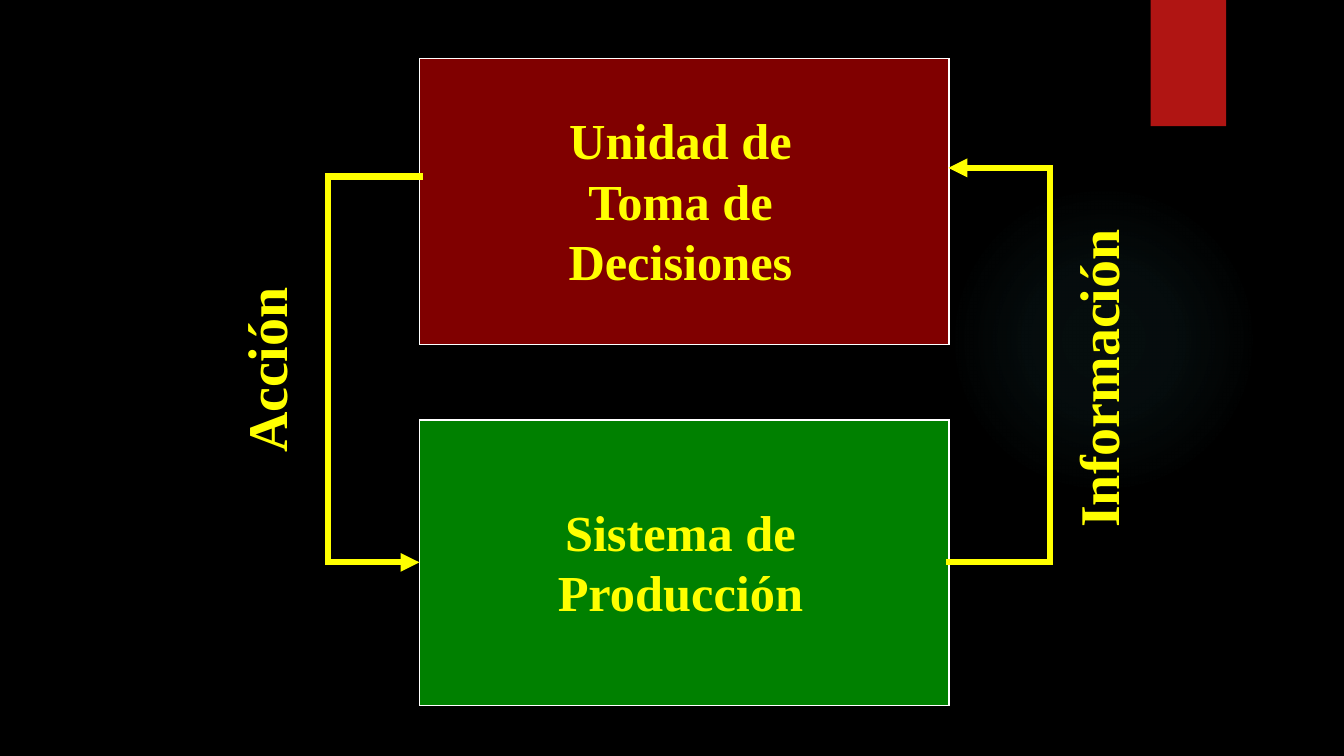
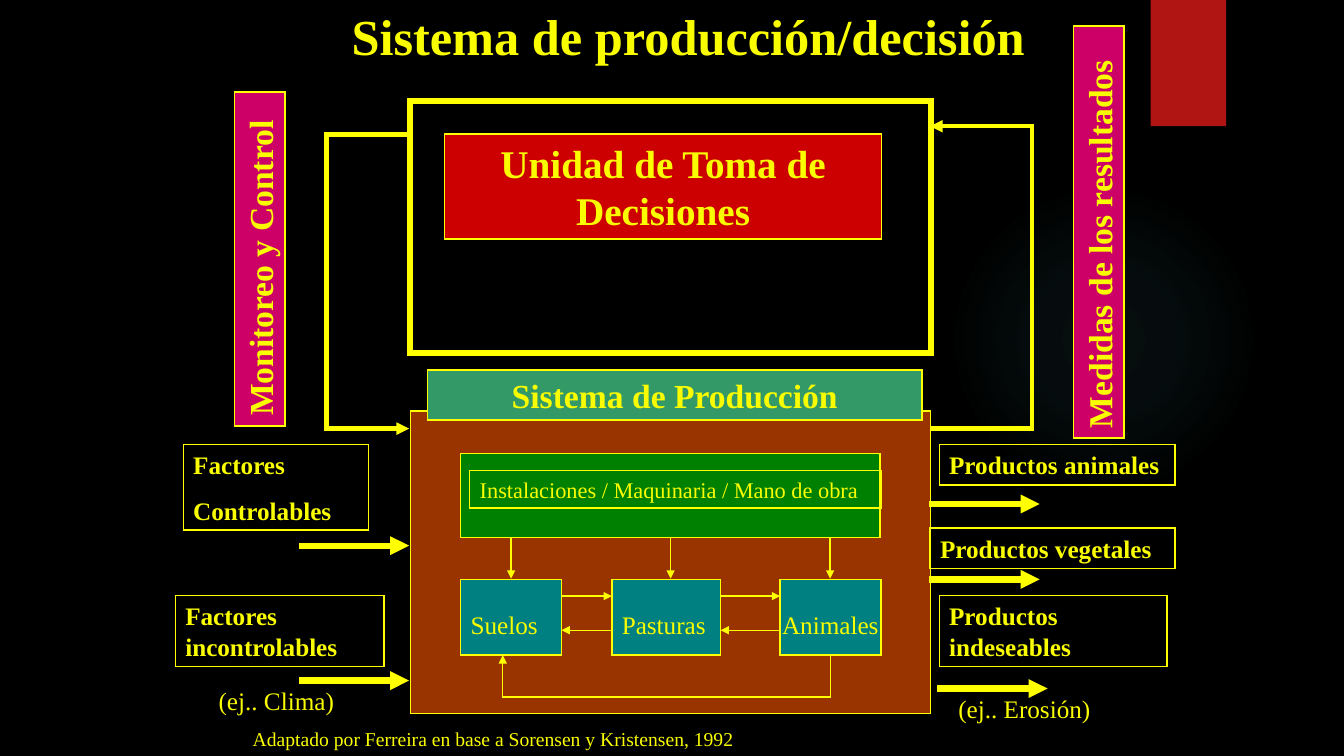
from itertools import pairwise

from pptx import Presentation
from pptx.dml.color import RGBColor
from pptx.enum.shapes import MSO_CONNECTOR, MSO_SHAPE
from pptx.enum.text import MSO_ANCHOR, MSO_AUTO_SIZE, PP_ALIGN
from pptx.oxml import parse_xml
from pptx.oxml.ns import nsdecls, qn
from pptx.util import Cm, Pt

RECT, ELLIPSE = MSO_SHAPE.RECTANGLE, MSO_SHAPE.OVAL
STRAIGHT = MSO_CONNECTOR.STRAIGHT
TOP, MIDDLE = MSO_ANCHOR.TOP, MSO_ANCHOR.MIDDLE
LEFT, CENTER = PP_ALIGN.LEFT, PP_ALIGN.CENTER
FIXED_SIZE = MSO_AUTO_SIZE.NONE
TITLE_ONLY, BLANK = 5, 6

FONT = "Times New Roman"
BLACK, WHITE, YELLOW, LEMON = "000000", "FFFFFF", "FFFF00", "FAFD00"
MAROON, GREEN, TEAL, BROWN = "800000", "008000", "008080", "993300"
SCARLET, MAGENTA, SEA, TAB_RED, GLOW = "CC0000", "CC0066", "339966", "B01513", "50B9C1"
INSETS = (0.25, 0.13, 0.25, 0.13)


def rgb(value):
    return RGBColor.from_string(value)


def write(shape, text, size=18, color=LEMON, bold=False, align=LEFT,
          anchor=TOP, insets=INSETS, gap=0):
    """Fill a shape with one paragraph per line; insets run left, top, right, bottom."""
    frame = shape.text_frame
    frame.text = text
    frame.word_wrap = True
    frame.auto_size = FIXED_SIZE
    frame.vertical_anchor = anchor
    (frame.margin_left, frame.margin_top,
     frame.margin_right, frame.margin_bottom) = map(Cm, insets)
    for index, paragraph in enumerate(frame.paragraphs):
        paragraph.alignment = align
        paragraph.space_before = Pt(gap if index else 0)
        font = paragraph.font
        font.name, font.size, font.bold = FONT, Pt(size), bold
        font.color.rgb = rgb(color)


class Deck:
    """Holds the presentation, its shared style and the slide being drawn."""

    def __init__(self):
        self.prs = Presentation()
        self.prs.slide_width, self.prs.slide_height = Cm(33.87), Cm(19.05)
        self.slide = None

    def new_slide(self, layout):
        self.slide = self.prs.slides.add_slide(self.prs.slide_layouts[layout])

    def decorate_master(self):
        """Give the master its black ground, soft glow and red tab."""
        master = self.prs.slide_master
        ground = master.background.fill
        ground.solid()
        ground.fore_color.rgb = rgb(BLACK)
        glow = self.box((23.9, 4.65, 7.82, 7.82), line=None, kind=ELLIPSE)
        stops = "".join(
            f'<a:gs pos="{place}000"><a:srgbClr val="{GLOW}">'
            f'<a:alpha val="{alpha}000"/></a:srgbClr></a:gs>'
            for place, alpha in ((0, 7), (36, 6), (69, 0)))
        gradient = parse_xml(
            f'<a:gradFill {nsdecls("a")}><a:gsLst>{stops}</a:gsLst><a:path path="circle">'
            '<a:fillToRect l="50000" t="50000" r="50000" b="50000"/></a:path></a:gradFill>')
        properties = glow.element.spPr
        properties.replace(properties.find(qn("a:noFill")), gradient)
        tab = self.box((29, 0, 1.9, 3.18), fill=TAB_RED, line=None)
        for ornament in (glow, tab):
            master.shapes.element.append(ornament.element)

    def title(self, text, at):
        heading = self.slide.shapes.title
        heading.left, heading.top, heading.width, heading.height = map(Cm, at)
        write(heading, text, size=36, bold=True, align=CENTER)

    def box(self, at, text="", fill=None, line=YELLOW, weight=1, turn=0,
            kind=RECT, **style):
        shape = self.slide.shapes.add_shape(kind, *map(Cm, at))
        shape.shadow.inherit = False
        shape.rotation = turn
        if fill:
            shape.fill.solid()
            shape.fill.fore_color.rgb = rgb(fill)
        else:
            shape.fill.background()
        if line:
            shape.line.color.rgb = rgb(line)
            shape.line.width = Pt(weight)
            stroke = shape.element.spPr.find(qn("a:ln"))
            stroke.append(parse_xml(f'<a:miter {nsdecls("a")} lim="800000"/>'))
        else:
            shape.line.fill.background()
        if text:
            write(shape, text, **style)
        return shape

    def caption(self, at, text, turn=0, **style):
        label = self.slide.shapes.add_textbox(*map(Cm, at))
        label.rotation = turn
        write(label, text, **style)

    def arrow(self, *points, weight=1):
        """Draw straight segments through the points, with a head at the last one."""
        for start, end in pairwise(points):
            segment = self.slide.shapes.add_connector(STRAIGHT, *map(Cm, start + end))
            segment.line.color.rgb = rgb(YELLOW)
            segment.line.width = Pt(weight)
            properties = segment.element.spPr
            properties.append(parse_xml(f'<a:effectLst {nsdecls("a")}/>'))
            stroke = properties.find(qn("a:ln"))
            stroke.set("cap", "sq")
        stroke.append(parse_xml(f'<a:tailEnd {nsdecls("a")} type="triangle"/>'))


def draw_decision_cycle(deck):
    for top, fill, text in ((10.58, GREEN, "Sistema de Producción"),
                            (1.48, MAROON, "Unidad de Toma de Decisiones")):
        deck.box((10.58, top, 13.34, 7.2), text, fill=fill, line=WHITE, size=36,
                 color=YELLOW, bold=True, align=CENTER, anchor=MIDDLE,
                 insets=(2.3, 0.13, 2.5, 0.2))
    deck.arrow((23.93, 14.17), (26.46, 14.17), (26.46, 4.23), (23.9, 4.23), weight=4.5)
    deck.arrow((10.58, 4.45), (8.26, 4.45), (8.26, 14.17), (10.57, 14.17), weight=4.5)
    for at, text in (((23.42, 8.33, 8.46, 1.98), "Información"),
                     ((3.84, 7.8, 5.72, 1.98), "Acción")):
        deck.caption(at, text, turn=270, size=40, color=YELLOW, bold=True)


def draw_resources(deck):
    """Draw the production system with its resources and their exchanges."""
    deck.box((10.34, 10.36, 13.11, 7.62), fill=BROWN)
    deck.box((11.61, 11.43, 10.57, 2.12), fill=GREEN)
    deck.box((11.84, 11.86, 10.36, 0.94), "Instalaciones / Maquinaria / Mano de obra",
             size=16)
    resources = ((11.61, 2.54, 0.25, "Suelos"), (15.42, 2.74, 0.25, "Pasturas"),
                 (19.66, 2.54, 0.05, "Animales"))
    for index, (left, width, inset, name) in enumerate(resources):
        deck.box((left, 14.6, width, 1.91), name, fill=TEAL, insets=(inset, 0.76, 0, 0))
        supply = 12.88 + 4.02 * index
        deck.arrow((supply, 13.56), (supply, 14.58))
    for (left, width, *_), (following, *_) in pairwise(resources):
        edge = left + width
        deck.arrow((edge, 15.02), (following, 15.02))
        deck.arrow((following, 15.88), (edge, 15.88))
    deck.arrow((20.93, 16.54), (20.93, 17.56), (12.67, 17.56), (12.67, 16.51))


def draw_production_system(deck):
    deck.title("Sistema de producción/decisión", (8.46, 0, 17.78, 1.78))
    deck.box((10.34, 2.54, 13.13, 6.35), weight=4.5)
    deck.box((11.2, 3.38, 11.02, 2.64), "Unidad de Toma de Decisiones", fill=SCARLET,
             size=28, bold=True, align=CENTER)
    draw_resources(deck)
    deck.box((10.77, 9.32, 12.47, 1.27), "Sistema de Producción", fill=SEA,
             size=24, bold=True, align=CENTER)
    deck.arrow((23.5, 10.8), (26.01, 10.8), (26.01, 3.18), (23.44, 3.18), weight=3)
    deck.arrow((10.36, 3.39), (8.23, 3.39), (8.23, 10.8), (10.31, 10.8), weight=3)
    for at, text in (((22.5, 5.21, 10.39, 1.27), "Medidas de los resultados"),
                     ((2.34, 5.89, 8.41, 1.27), "Monitoreo y Control")):
        deck.box(at, text, fill=MAGENTA, turn=270, size=24, bold=True)

    for at, text in (((4.62, 11.2, 4.67, 2.16), "Factores\nControlables"),
                     ((4.42, 15.01, 5.26, 1.78), "Factores incontrolables"),
                     ((23.67, 11.2, 5.94, 1.02), "Productos animales"),
                     ((23.44, 13.31, 6.17, 1.02), "Productos vegetales"),
                     ((23.67, 15.01, 5.74, 1.78), "Productos indeseables")):
        deck.box(at, text, bold=True, gap=11.2)
    for left, level in ((7.61, 13.75), (7.61, 17.15),
                        (23.5, 12.7), (23.5, 14.6), (23.7, 17.35)):
        deck.arrow((left, level), (left + 2.7, level), weight=4.5)

    deck.caption((5.26, 17.15, 4.65, 1.02), "(ej.. Clima)")
    deck.caption((23.9, 17.35, 4.85, 1.02), "(ej.. Erosión)")
    deck.caption((6.12, 18.2, 15.44, 0.85),
                 "Adaptado por Ferreira en base a Sorensen y Kristensen, 1992", size=14)


def main():
    deck = Deck()
    deck.new_slide(BLANK)
    deck.decorate_master()
    draw_decision_cycle(deck)
    deck.new_slide(TITLE_ONLY)
    draw_production_system(deck)
    deck.prs.save("out.pptx")


if __name__ == "__main__":
    main()
